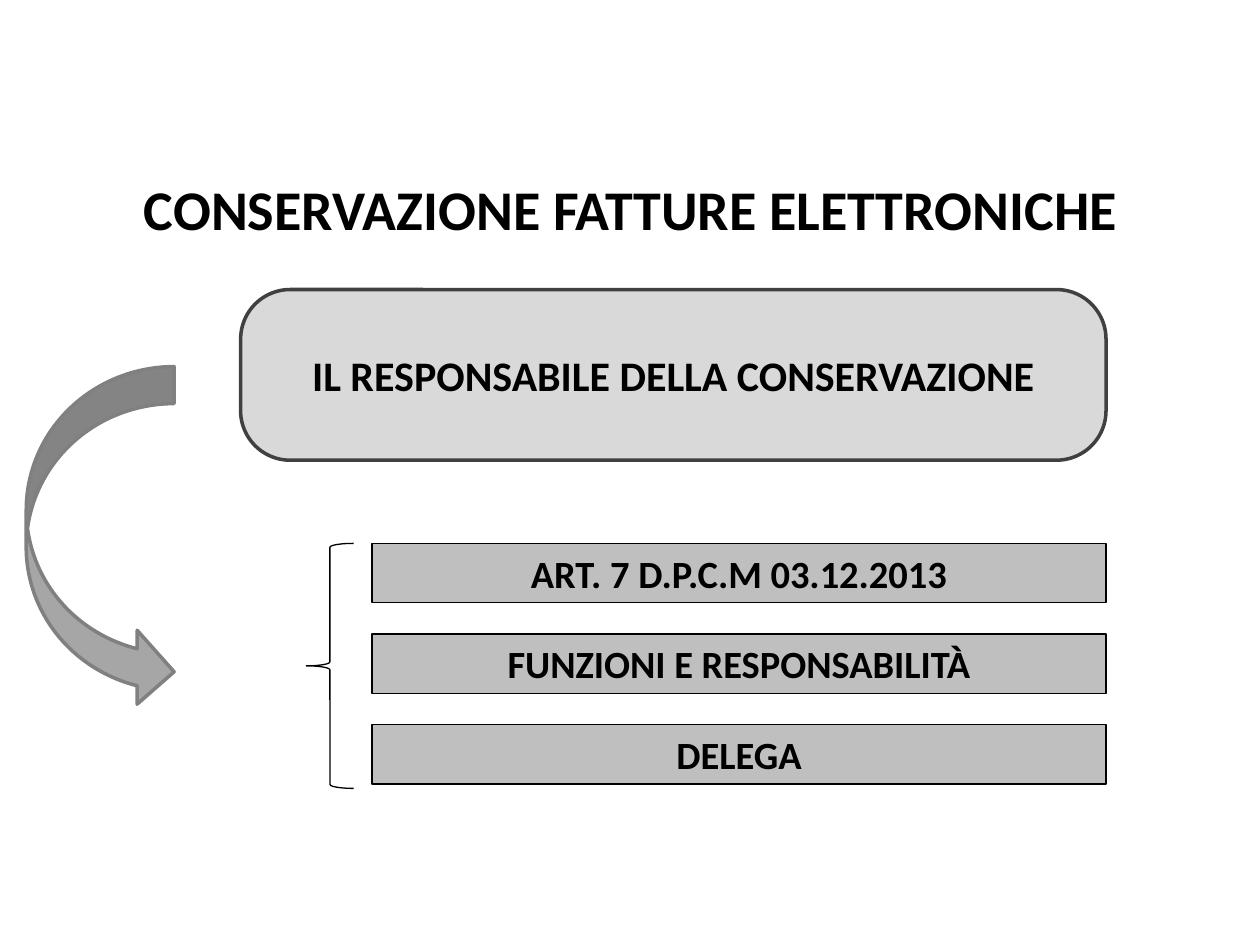
import dataclasses

import pptx
import pptx.dml.color
import pptx.enum.shapes
import pptx.enum.text
import pptx.util

Pt = pptx.util.Pt
Shape = pptx.enum.shapes.MSO_SHAPE
Anchor = pptx.enum.text.MSO_ANCHOR


@dataclasses.dataclass(frozen=True)
class Theme:
    font: str = "Calibri"
    ink: str = "000000"
    panel_fill: str = "D9D9D9"
    panel_line: str = "404040"
    arrow_fill: str = "A6A6A6"
    arrow_line: str = "808080"
    bar_fill: str = "BFBFBF"
    title_size: float = 32
    panel_size: float = 24
    bar_size: float = 22
    thick: float = 2
    thin: float = 0.75


class SlideBuilder:
    def __init__(self, slide, theme):
        self.slide = slide
        self.theme = theme

    def color(self, value):
        return pptx.dml.color.RGBColor.from_string(value)

    def label(self, shape, text, size, anchor):
        frame = shape.text_frame
        frame.word_wrap = True
        frame.vertical_anchor = anchor
        paragraph = frame.paragraphs[0]
        paragraph.alignment = pptx.enum.text.PP_ALIGN.CENTER
        run = paragraph.add_run()
        run.text = text
        run.font.name = self.theme.font
        run.font.size = Pt(size)
        run.font.bold = True
        run.font.color.rgb = self.color(self.theme.ink)

    def title(self, text, box):
        shape = self.slide.shapes.add_textbox(*map(Pt, box))
        self.label(shape, text, self.theme.title_size, Anchor.MIDDLE)

    def outline(self, kind, box, line, width, fill=None):
        shape = self.slide.shapes.add_shape(kind, *map(Pt, box))
        shape.shadow.inherit = False
        shape.line.color.rgb = self.color(line)
        shape.line.width = Pt(width)
        if fill:
            shape.fill.solid()
            shape.fill.fore_color.rgb = self.color(fill)
        else:
            shape.fill.background()
        return shape

    def panel(self, text, box):
        theme = self.theme
        shape = self.outline(Shape.ROUNDED_RECTANGLE, box, theme.panel_line, theme.thick, theme.panel_fill)
        shape.adjustments[0] = 0.29
        self.label(shape, text, theme.panel_size, Anchor.MIDDLE)

    def arrow(self, box):
        theme = self.theme
        self.outline(Shape.CURVED_RIGHT_ARROW, box, theme.arrow_line, theme.thick, theme.arrow_fill)

    def brace(self, box):
        self.outline(Shape.LEFT_BRACE, box, self.theme.ink, self.theme.thin)

    def bar(self, text, box):
        theme = self.theme
        shape = self.outline(Shape.RECTANGLE, box, theme.ink, theme.thin, theme.bar_fill)
        self.label(shape, text, theme.bar_size, Anchor.TOP)
        shape.text_frame.auto_size = pptx.enum.text.MSO_AUTO_SIZE.SHAPE_TO_FIT_TEXT


def main():
    presentation = pptx.Presentation()
    presentation.slide_width = Pt(720)
    presentation.slide_height = Pt(540)
    slide = presentation.slides.add_slide(presentation.slide_layouts[6])
    builder = SlideBuilder(slide, Theme())

    builder.title("CONSERVAZIONE FATTURE ELETTRONICHE", (0.5, 97.5, 720, 43))
    builder.panel("IL RESPONSABILE DELLA CONSERVAZIONE", (137.5, 165.5, 494.5, 97.5))
    builder.arrow((15, 209.5, 84.5, 195.5))

    bars_top, bar_pitch = 310.5, 51.8
    builder.brace((175, bars_top, 27, 140))
    topics = ("ART. 7 D.P.C.M 03.12.2013", "FUNZIONI E RESPONSABILITÀ", "DELEGA")
    for index, topic in enumerate(topics):
        builder.bar(topic, (212.5, bars_top + index * bar_pitch, 419.5, 34))

    presentation.save("out.pptx")


if __name__ == "__main__":
    main()
